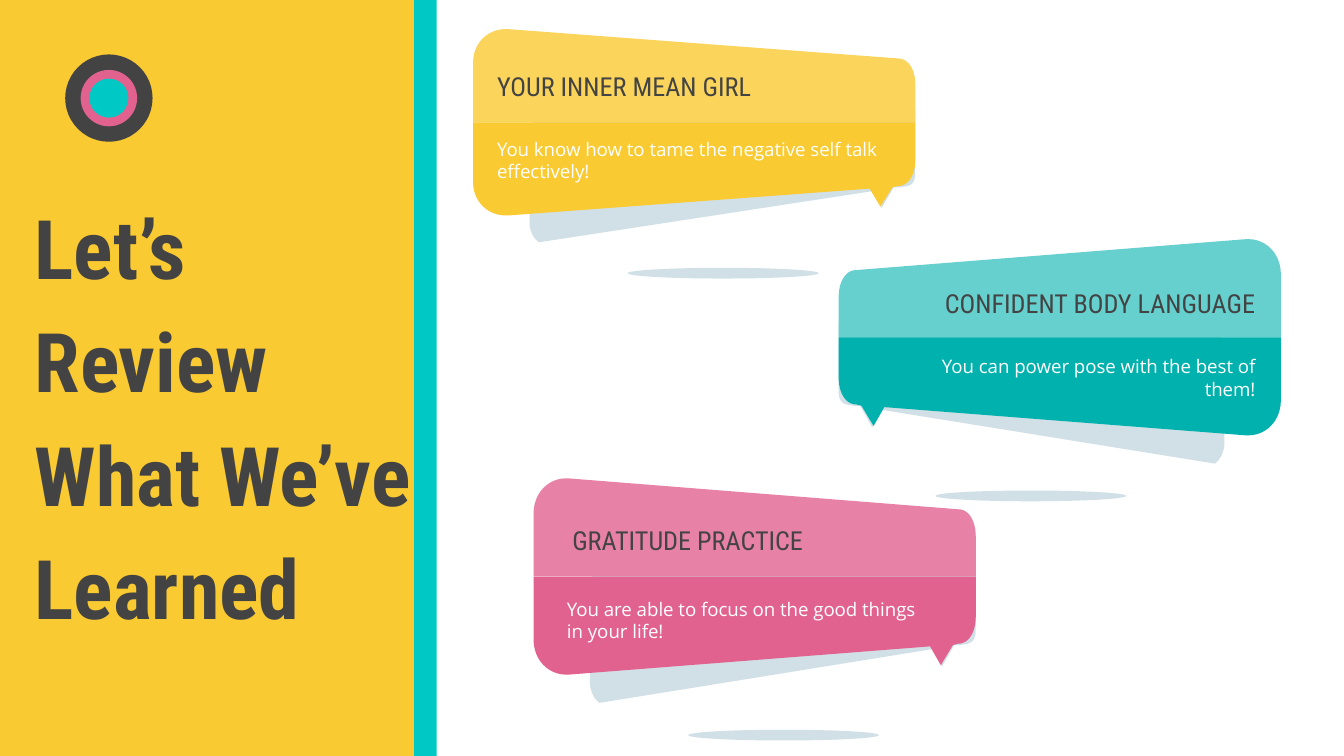
from pptx import Presentation
from pptx.dml.color import RGBColor
from pptx.enum.shapes import MSO_SHAPE
from pptx.enum.text import MSO_ANCHOR, PP_ALIGN
from pptx.util import Inches, Pt

RECT, OVAL = MSO_SHAPE.RECTANGLE, MSO_SHAPE.OVAL
LEFT, RIGHT = PP_ALIGN.LEFT, PP_ALIGN.RIGHT
MIDDLE = MSO_ANCHOR.MIDDLE
DARK, WHITE, SHADE = "434343", "FFFFFF", "D1DFE6"
YELLOW, TURQUOISE, PINK = "FACA32", "00C8C4", "E1628E"
HEADING_FONT, BODY_FONT = "Roboto Condensed", "Open Sans"
BUBBLE_WIDTH = 3.29

# Bubble outlines, measured from the left end of the dividing line.
# A pair is a straight step, a six-number entry is a Bezier curve.
SHADOW = [(0.6, -0.1), (0.5, -0.1, 0.42, -0.02, 0.42, 0.09), (0.42, 0.79),
          (0.42, 0.85, 0.45, 0.91, 0.49, 0.94), (2.97, 0.54), (3.04, 0.67),
          (3.13, 0.51), (3.17, 0.51), (3.24, 0.5, 3.29, 0.5, 3.29, 0.4),
          (3.29, -0.1)]
TOP = [(0.24, -0.73), (0.11, -0.73, 0, -0.62, 0, -0.47), (0, 0), (3.29, 0),
       (3.29, -0.3), (3.29, -0.41, 3.24, -0.5, 3.16, -0.5), (0.26, -0.73)]
BOTTOM = [(0, 0), (0, 0.47), (0, 0.62, 0.11, 0.73, 0.24, 0.73), (0.26, 0.73),
          (2.95, 0.52), (3.03, 0.66), (3.12, 0.51), (3.16, 0.5),
          (3.24, 0.5, 3.29, 0.41, 3.29, 0.3), (3.29, 0)]

# Widescreen slide, 16:9
prs = Presentation()
prs.slide_width, prs.slide_height = Inches(10), Inches(10 * 9 / 16)
slide = prs.slides.add_slide(prs.slide_layouts[6])
shapes = slide.shapes


def paint(shape, color):
    shape.shadow.inherit = False
    shape.fill.solid()
    shape.fill.fore_color.rgb = RGBColor.from_string(color)
    shape.line.fill.background()


def add_text(box, text, font, size, color, align=LEFT):
    textbox = shapes.add_textbox(*map(Inches, box))
    frame = textbox.text_frame
    frame.word_wrap = True
    frame.vertical_anchor = MIDDLE
    frame.margin_left = frame.margin_right = Inches(0.1)
    frame.margin_top = frame.margin_bottom = Inches(0.1)
    paragraph = frame.paragraphs[0]
    paragraph.alignment = align
    run = paragraph.add_run()
    run.text = text
    run.font.name, run.font.size = font, Pt(size)
    run.font.color.rgb = RGBColor.from_string(color)
    return paragraph, run


# Side panel with its turquoise edge
for panel_width, color in [(3.25, TURQUOISE), (3.08, YELLOW)]:
    paint(shapes.add_shape(RECT, 0, 0, Inches(panel_width), prs.slide_height), color)

# Target of concentric circles
for diameter, color in [(0.65, DARK), (0.42, PINK), (0.29, TURQUOISE)]:
    left, top = 0.81 - diameter / 2, 0.73 - diameter / 2
    paint(shapes.add_shape(OVAL, Inches(left), Inches(top),
                           Inches(diameter), Inches(diameter)), color)

# Slide title
title, title_run = add_text((0.16, 1.05, 3.09, 3.99), "Let’s Review What We’ve Learned",
                            HEADING_FONT, 44, DARK)
title.line_spacing = 1.15
title_run.font.bold = True

# Speech bubbles: left, divider height, vertical scale, mirrored, colours, texts
bubbles = [
    (3.52, 0.91, 0.95, False, "FBD55B", YELLOW,
     "YOUR INNER MEAN GIRL", (3.6, 0.46, 3.04, 0.36),
     "You know how to tame the negative self talk effectively!", (3.6, 0.97, 3.04, 0.44)),
    (6.24, 2.51, 1, True, "66D0CE", "00B1AE",
     "CONFIDENT BODY LANGUAGE", (6.31, 1.93, 3.13, 0.65),
     "You can power pose with the best of them!", (6.78, 2.63, 2.66, 0.36)),
    (3.97, 4.29, 1, False, "E781A5", PINK,
     "GRATITUDE PRACTICE", (4.16, 3.82, 2.61, 0.39),
     "You are able to focus on the good things in your life!", (4.12, 4.4, 2.88, 0.43)),
]
for (left, divider, stretch, mirrored, light, strong,
     heading, heading_box, message, message_box) in bubbles:
    # Shadow on the ground
    ground_x = BUBBLE_WIDTH - 1.15 - 1.42 if mirrored else 1.15
    paint(shapes.add_shape(OVAL, Inches(left + ground_x), Inches(divider + 1.14 * stretch),
                           Inches(1.42), Inches(0.08)), SHADE)

    # Shadow and the two halves, with curves sampled as short steps
    for outline, color in [(SHADOW, SHADE), (TOP, light), (BOTTOM, strong)]:
        points = [outline[0]]
        for step in outline[1:]:
            if len(step) == 2:
                points.append(step)
                continue
            curve = [points[-1], step[:2], step[2:4], step[4:]]
            for t in [i / 12 for i in range(1, 13)]:
                weights = ((1 - t) ** 3, 3 * t * (1 - t) ** 2, 3 * t * t * (1 - t), t ** 3)
                points.append(tuple(sum(w * p[axis] for w, p in zip(weights, curve))
                                    for axis in (0, 1)))
        corners = [(Inches(left + (BUBBLE_WIDTH - x if mirrored else x)),
                    Inches(divider + y * stretch)) for x, y in points]
        builder = shapes.build_freeform(*corners[0])
        builder.add_line_segments(corners[1:], close=True)
        paint(builder.convert_to_shape(), color)

    # Heading and message
    align = RIGHT if mirrored else LEFT
    add_text(heading_box, heading, HEADING_FONT, 14, DARK, align)
    add_text(message_box, message, BODY_FONT, 10, WHITE, align)

prs.save("out.pptx")
